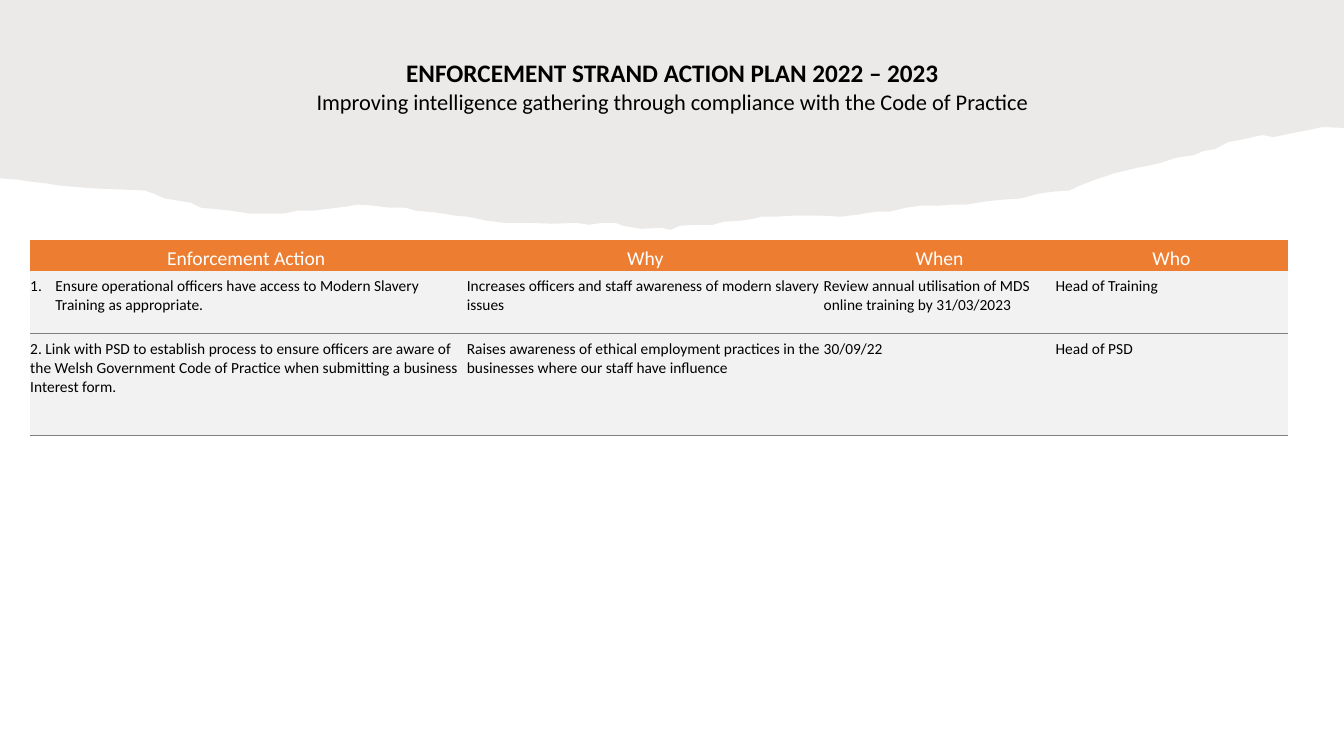
import pptx
import pptx.util
import pptx.dml.color
import pptx.enum.text
import pptx.oxml
import lxml.etree

WIDE, HIGH = 13.33, 7.5
FONT = "Calibri"
BLACK, WHITE, ORANGE, PALE, GREY, TAUPE = "000000", "FFFFFF", "ED7D31", "F2F2F2", "808080", "82766A"

TITLE = [
    ("ENFORCEMENT STRAND ACTION PLAN 2022 – 2023", 18, True),
    ("Improving intelligence gathering through compliance with the Code of Practice", 16, False),
]
HEADS = ["Enforcement Action ", "Why", "When", "Who"]
ROWS = [
    ["Ensure operational officers have access to Modern Slavery Training as appropriate.",
     "Increases officers and staff awareness of modern slavery issues",
     "Review annual utilisation of MDS online training by 31/03/2023",
     "Head of Training"],
    ["2. Link with PSD to establish process to ensure officers are aware of the Welsh Government "
     "Code of Practice when submitting a business Interest form.",
     "Raises awareness of ethical employment practices in the businesses where our staff have influence",
     "30/09/22",
     "Head of PSD"],
]
COLS = [4.33, 3.54, 2.3, 2.3]
TALL = [0.31, 0.62, 1.01]
TEAR = [
    (13.33, 1.27), (13.12, 1.26), (12.98, 1.29), (12.82, 1.32), (12.63, 1.36), (12.52, 1.34),
    (12.29, 1.39), (12.18, 1.41), (12.05, 1.48), (11.93, 1.5), (11.84, 1.54), (11.69, 1.56),
    (11.62, 1.58), (11.5, 1.62), (11.36, 1.65), (11.3, 1.66), (11.05, 1.72), (10.84, 1.79),
    (10.69, 1.85), (10.61, 1.89), (10.46, 1.9), (10.31, 1.92), (10.12, 1.97), (9.95, 1.98),
    (9.77, 2), (9.58, 2.03), (9.44, 2.03), (9.31, 2.04), (9.13, 2.04), (8.99, 2.06),
    (8.82, 2.1), (8.69, 2.1), (8.5, 2.13), (8.34, 2.15), (8.15, 2.14), (7.87, 2.14),
    (7.69, 2.15), (7.55, 2.15), (7.47, 2.17), (7.35, 2.19), (7.18, 2.2), (7.07, 2.23),
    (6.91, 2.23), (6.74, 2.24), (6.65, 2.28), (6.56, 2.26), (6.36, 2.27), (6.18, 2.24),
    (6.1, 2.21), (5.98, 2.21), (5.84, 2.23), (5.72, 2.21), (5.5, 2.22), (5.2, 2.21),
    (5, 2.21), (4.83, 2.19), (4.64, 2.15), (4.52, 2.14), (4.34, 2.11), (4.12, 2.09),
    (4.02, 2.06), (3.86, 2.06), (3.7, 2.04), (3.55, 2.03), (3.43, 2.05), (3.11, 2.09),
    (2.95, 2.09), (2.81, 2.12), (2.69, 2.12), (2.48, 2.12), (2.29, 2.09), (2.09, 2.07),
    (1.99, 2.06), (1.89, 2.01), (1.64, 1.97), (1.52, 1.92), (1.44, 1.89), (1.2, 1.88),
    (0.96, 1.87), (0.81, 1.86), (0.58, 1.84), (0.46, 1.82), (0.29, 1.8), (0.16, 1.78),
    (0, 1.77),
]

inch = pptx.util.Inches
align = pptx.enum.text.PP_ALIGN
anchor = pptx.enum.text.MSO_ANCHOR
NS = pptx.oxml.ns.nsdecls("a")


def paint(fill, color):
    fill.solid()
    fill.fore_color.rgb = pptx.dml.color.RGBColor.from_string(color)


def write(para, text, size, color, bold=False):
    run = para.add_run()
    run.text = text
    run.font.name = FONT
    run.font.size = pptx.util.Pt(size)
    run.font.bold = bold
    paint(run.font.fill, color)


def draw_tear(slide):
    pen = slide.shapes.build_freeform(0, 0)
    pen.add_line_segments([(inch(x), inch(y)) for x, y in [(WIDE, 0)] + TEAR], close=True)
    tear = pen.convert_to_shape()
    tear.shadow.inherit = False
    tear.line.fill.background()
    paint(tear.fill, TAUPE)
    tint = tear.fill._xPr.find(".//" + pptx.oxml.ns.qn("a:srgbClr"))
    lxml.etree.SubElement(tint, pptx.oxml.ns.qn("a:alpha"), val="15000")


def draw_title(slide):
    box = slide.shapes.add_textbox(inch(0.91), inch(0.54), inch(11.52), inch(0.96))
    frame = box.text_frame
    frame.word_wrap = True
    frame.vertical_anchor = anchor.BOTTOM
    frame.margin_bottom = inch(0.37)
    for i, (text, size, bold) in enumerate(TITLE):
        para = frame.add_paragraph() if i else frame.paragraphs[0]
        para.alignment = align.CENTER
        para.line_spacing = 0.7
        para.space_after = pptx.util.Pt(0 if i else 6)
        write(para, text, size, BLACK, bold)


def rule(cell):
    line = pptx.oxml.parse_xml(
        f'<a:lnB {NS} w="9525"><a:solidFill><a:srgbClr val="{GREY}"/></a:solidFill></a:lnB>')
    cell._tc.get_or_add_tcPr().insert(0, line)


def number(para):
    props = para._p.get_or_add_pPr()
    props.set("marL", str(inch(0.25)))
    props.set("indent", str(-inch(0.25)))
    props.append(pptx.oxml.parse_xml(f'<a:buAutoNum {NS} type="arabicPeriod"/>'))


def draw_table(slide):
    frame = slide.shapes.add_table(len(TALL), len(COLS), inch(0.3), inch(2.38),
                                   inch(sum(COLS)), inch(sum(TALL)))
    table = frame.table
    table.horz_banding = False
    style = table._tbl.tblPr.find(pptx.oxml.ns.qn("a:tableStyleId"))
    style.text = "{2D5ABB26-0587-4C30-8999-92F81FD0307C}"
    for col, wide in zip(table.columns, COLS):
        col.width = inch(wide)
    for row, tall in zip(table.rows, TALL):
        row.height = inch(tall)
    for r, texts in enumerate([HEADS] + ROWS):
        for c, text in enumerate(texts):
            cell = table.cell(r, c)
            cell.margin_left = cell.margin_right = cell.margin_bottom = 0
            cell.margin_top = inch(0.06)
            para = cell.text_frame.paragraphs[0]
            if r == 0:
                cell.vertical_anchor = anchor.MIDDLE
                para.alignment = align.CENTER
                paint(cell.fill, ORANGE)
                write(para, text, 14, WHITE)
            else:
                paint(cell.fill, PALE)
                write(para, text, 11, BLACK)
                rule(cell)
    number(table.cell(1, 0).text_frame.paragraphs[0])


def main():
    deck = pptx.Presentation()
    deck.slide_width, deck.slide_height = inch(WIDE), inch(HIGH)
    slide = deck.slides.add_slide(deck.slide_layouts[6])
    draw_tear(slide)
    draw_title(slide)
    draw_table(slide)
    deck.save("out.pptx")


if __name__ == "__main__":
    main()
